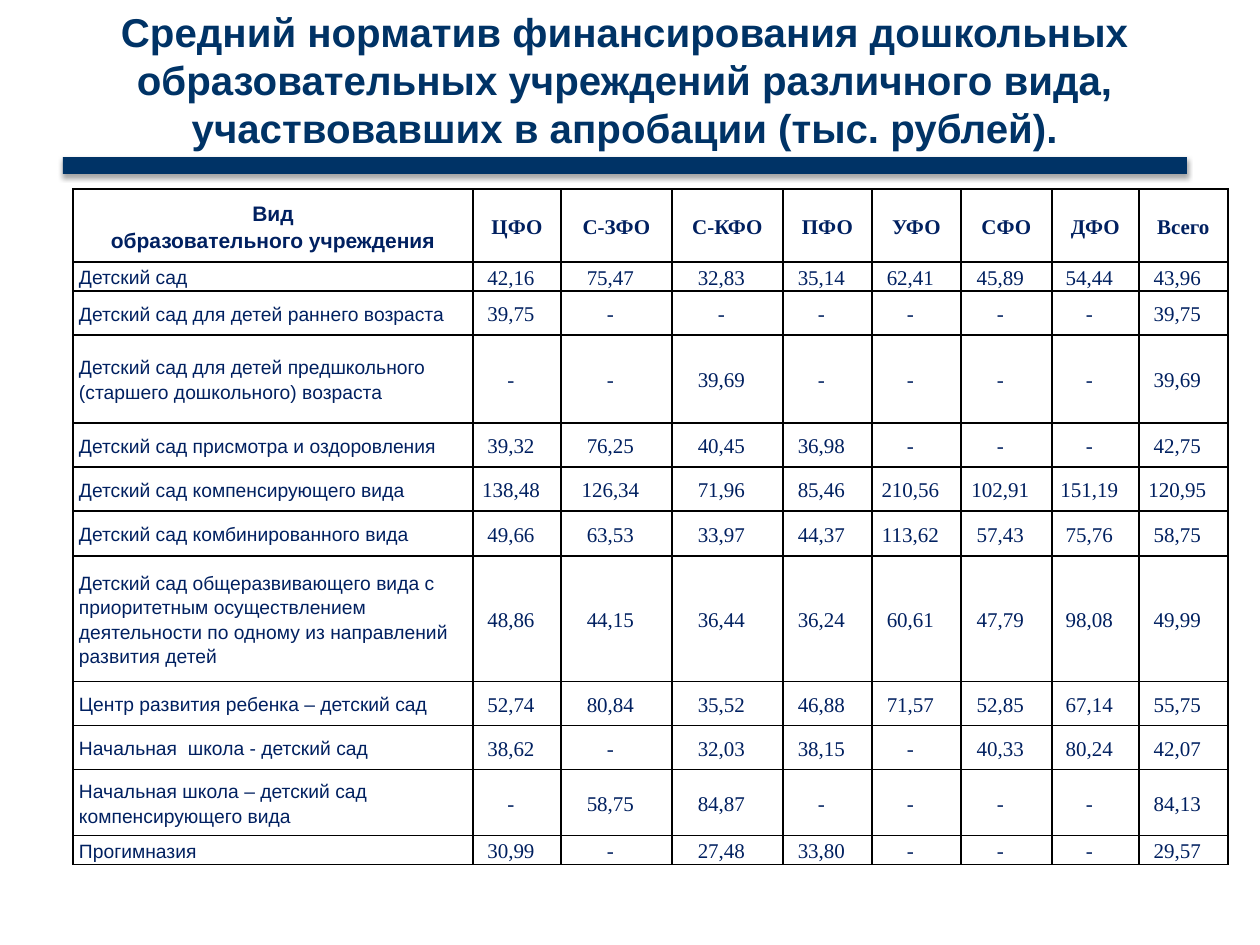
import pptx
import pptx.dml.color
import pptx.enum.shapes
import pptx.enum.text
import pptx.oxml
import pptx.oxml.ns
import pptx.util
from lxml import etree

EMU_PER_PX = 914400 // 126
NAVY = "003366"
INK = "002060"
CENTER = pptx.enum.text.PP_ALIGN.CENTER
LEFT = pptx.enum.text.PP_ALIGN.LEFT
MIDDLE = pptx.enum.text.MSO_ANCHOR.MIDDLE
BOTTOM = pptx.enum.text.MSO_ANCHOR.BOTTOM

TITLE = (
    "Средний норматив финансирования дошкольных образовательных "
    "учреждений различного вида, участвовавших в апробации (тыс. рублей)."
)
KIND_HEADING = "Вид\nобразовательного учреждения"
REGIONS = "ЦФО С-ЗФО С-КФО ПФО УФО СФО ДФО Всего".split()
COLUMN_WIDTHS = [400, 88, 111, 111, 89, 89, 91, 87, 89]
HEADING_HEIGHT = 73
INSTITUTIONS = [
    ("Детский сад", 21,
     "42,16 75,47 32,83 35,14 62,41 45,89 54,44 43,96"),
    ("Детский сад для детей раннего возраста", 44,
     "39,75 - - - - - - 39,75"),
    ("Детский сад для детей предшкольного (старшего дошкольного) возраста", 88,
     "- - 39,69 - - - - 39,69"),
    ("Детский сад присмотра и оздоровления", 44,
     "39,32 76,25 40,45 36,98 - - - 42,75"),
    ("Детский сад компенсирующего вида", 44,
     "138,48 126,34 71,96 85,46 210,56 102,91 151,19 120,95"),
    ("Детский сад комбинированного вида", 45,
     "49,66 63,53 33,97 44,37 113,62 57,43 75,76 58,75"),
    ("Детский сад общеразвивающего вида с приоритетным осуществлением "
     "деятельности по одному из направлений развития детей", 126,
     "48,86 44,15 36,44 36,24 60,61 47,79 98,08 49,99"),
    ("Центр развития ребенка – детский сад", 44,
     "52,74 80,84 35,52 46,88 71,57 52,85 67,14 55,75"),
    ("Начальная  школа - детский сад", 44,
     "38,62 - 32,03 38,15 - 40,33 80,24 42,07"),
    ("Начальная школа – детский сад компенсирующего вида", 66,
     "- 58,75 84,87 - - - - 84,13"),
    ("Прогимназия", 21,
     "30,99 - 27,48 33,80 - - - 29,57"),
]


def px(length):
    return pptx.util.Emu(length * EMU_PER_PX)


def color(value):
    return pptx.dml.color.RGBColor.from_string(value)


def write(frame, text, *, size, font="Arial", ink=INK, bold=False,
          align=CENTER, spacing=1.0):
    for number, line in enumerate(text.split("\n")):
        paragraph = frame.add_paragraph() if number else frame.paragraphs[0]
        paragraph.alignment = align
        paragraph.line_spacing = spacing
        run = paragraph.add_run()
        run.text = line
        run.font.size = pptx.util.Pt(size)
        run.font.name = font
        run.font.bold = bold
        run.font.color.rgb = color(ink)


def add_title(slide):
    title = slide.shapes.add_textbox(px(32), px(42), px(1187), px(116))
    title.text_frame.word_wrap = True
    title.text_frame.vertical_anchor = BOTTOM
    write(title.text_frame, TITLE, size=23, ink=NAVY, bold=True)


def add_rule(slide):
    rule = slide.shapes.add_shape(
        pptx.enum.shapes.MSO_SHAPE.RECTANGLE, px(63), px(157), px(1124), px(17))
    rule.fill.solid()
    rule.fill.fore_color.rgb = color(NAVY)
    rule.line.fill.background()
    rule.shadow.inherit = False
    effects = rule.element.spPr.find(pptx.oxml.ns.qn("a:effectLst"))
    effects.append(pptx.oxml.parse_xml(
        f'<a:outerShdw {pptx.oxml.ns.nsdecls("a")} blurRad="39370" dist="22860" '
        'dir="5400000" rotWithShape="0"><a:srgbClr val="000000">'
        '<a:alpha val="35000"/></a:srgbClr></a:outerShdw>'))


def add_borders(cell):
    properties = cell._tc.get_or_add_tcPr()
    for position, side in enumerate(("lnL", "lnR", "lnT", "lnB")):
        border = etree.Element(
            pptx.oxml.ns.qn(f"a:{side}"), w=str(pptx.util.Pt(1)))
        fill = etree.SubElement(border, pptx.oxml.ns.qn("a:solidFill"))
        etree.SubElement(fill, pptx.oxml.ns.qn("a:srgbClr"), val="000000")
        properties.insert(position, border)


def fill_cell(cell, text, right=6, **text_format):
    cell.fill.background()
    cell.vertical_anchor = MIDDLE
    cell.margin_left, cell.margin_right = px(6), px(right)
    cell.margin_top = cell.margin_bottom = 0
    write(cell.text_frame, text, spacing=1.15, **text_format)
    add_borders(cell)


def add_funding_table(slide):
    heights = [HEADING_HEIGHT] + [height for _, height, _ in INSTITUTIONS]
    table = slide.shapes.add_table(
        len(heights), len(COLUMN_WIDTHS), px(73), px(189),
        px(sum(COLUMN_WIDTHS)), px(sum(heights))).table
    table.first_row = table.horz_banding = False
    for column, width in zip(table.columns, COLUMN_WIDTHS):
        column.width = px(width)
    for row, height in zip(table.rows, heights):
        row.height = px(height)

    fill_cell(table.cell(0, 0), KIND_HEADING, size=12, bold=True)
    for column, region in enumerate(REGIONS, 1):
        fill_cell(table.cell(0, column), region, size=12, bold=True,
                  font="Times New Roman")
    for row, (kind, _, norms) in enumerate(INSTITUTIONS, 1):
        fill_cell(table.cell(row, 0), kind, size=11, align=LEFT)
        for column, norm in enumerate(norms.split(), 1):
            fill_cell(table.cell(row, column), norm, right=18, size=12,
                      font="Times New Roman")


def main():
    presentation = pptx.Presentation()
    presentation.slide_width = px(1260)
    presentation.slide_height = px(945)
    slide = presentation.slides.add_slide(presentation.slide_layouts[6])
    add_title(slide)
    add_funding_table(slide)
    add_rule(slide)
    presentation.save("out.pptx")


if __name__ == "__main__":
    main()
